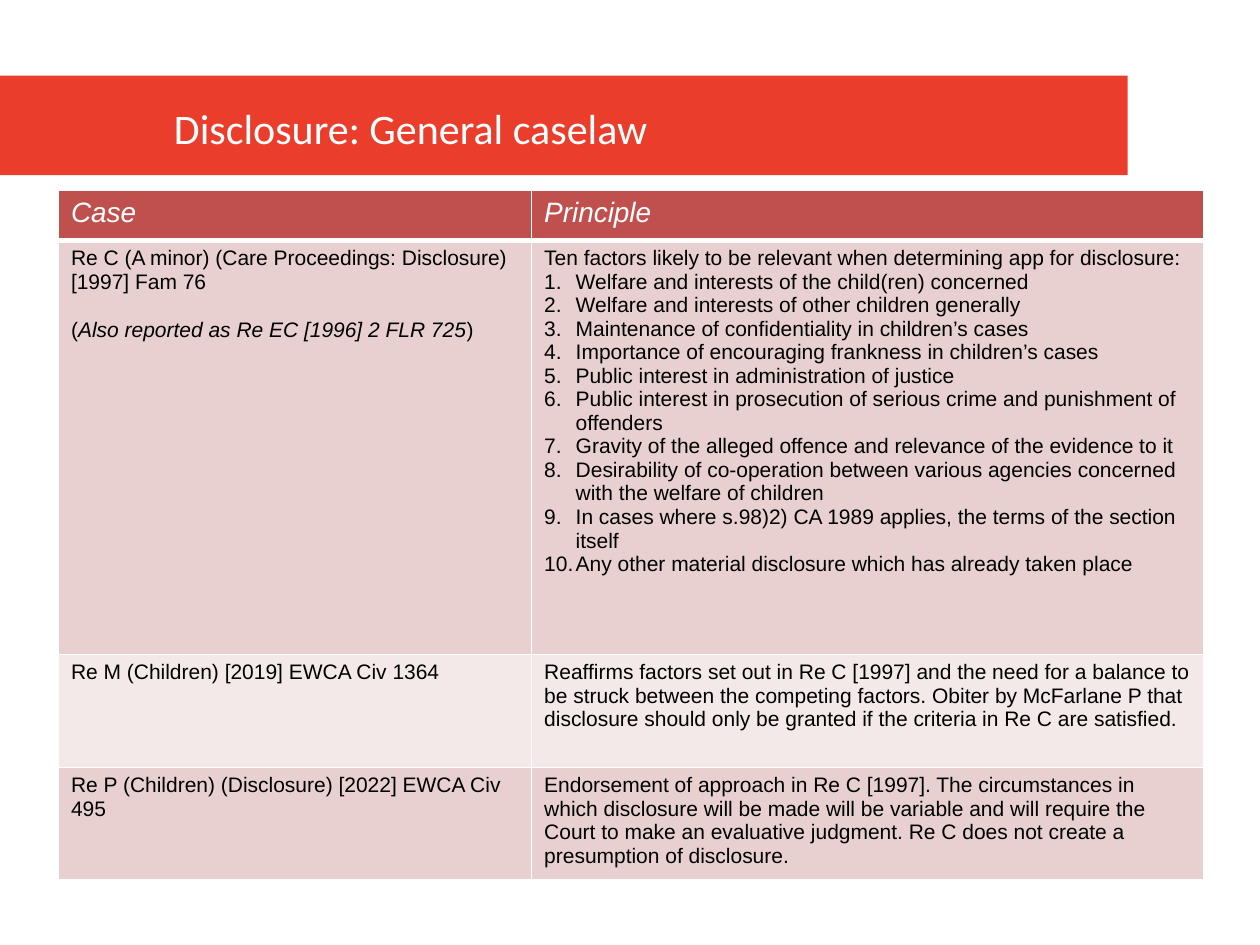
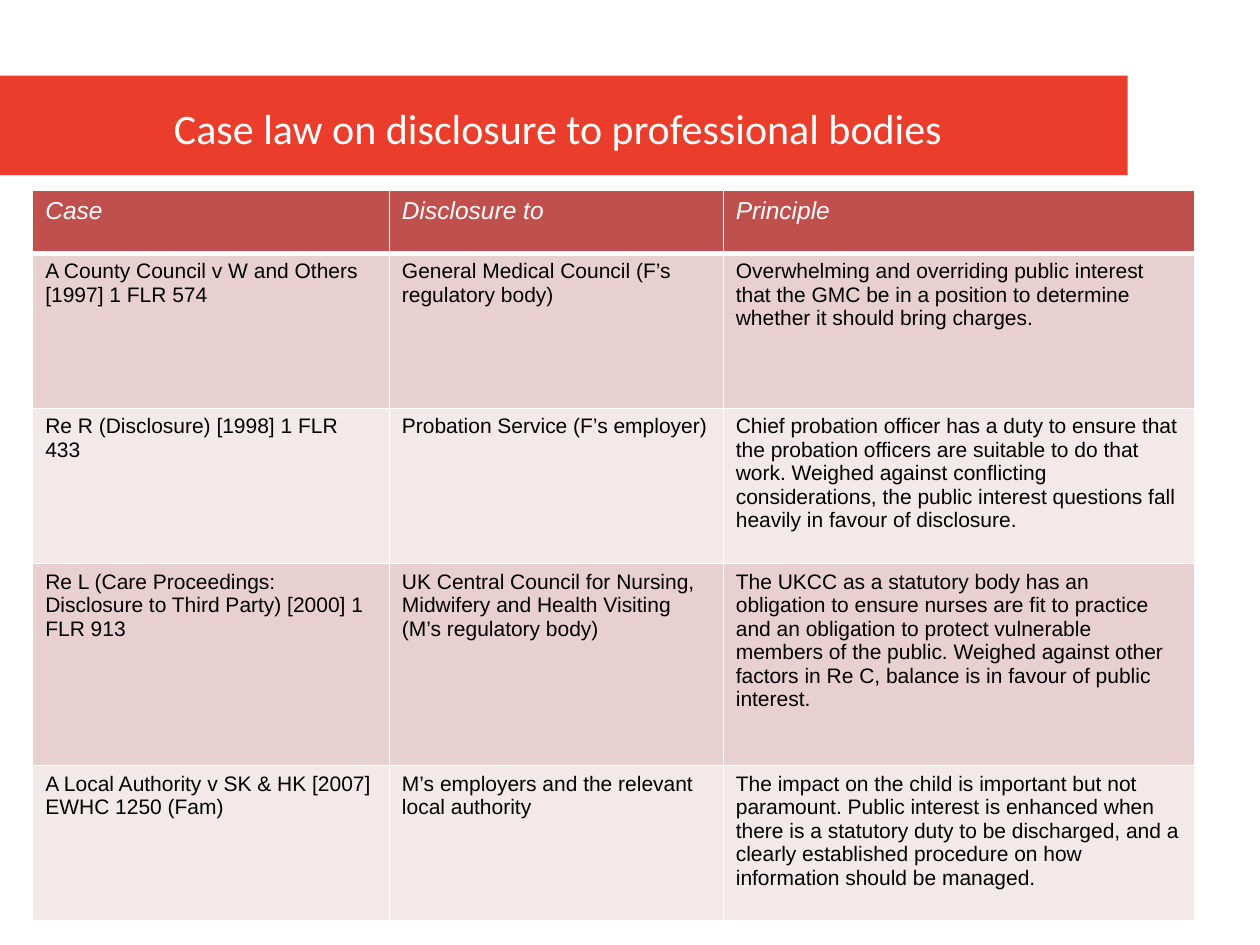
from lxml.etree import SubElement
from pptx import Presentation
from pptx.dml.color import RGBColor
from pptx.enum.shapes import MSO_SHAPE
from pptx.enum.text import MSO_ANCHOR, MSO_AUTO_SIZE, PP_ALIGN
from pptx.oxml.ns import qn
from pptx.util import Pt

RED, HEAD, WHITE, BLACK = "E71C07", "C0504D", "FFFFFF", "000000"
TINTS = ["F4E9E9", "E8D0D0"]
TITLE = {"name": "Calibri", "size": Pt(24), "bold": False}
CELL = {"name": "Arial", "bold": False}

# A paragraph that starts with # is numbered; text between * marks is italic.
FACTORS = [
    "Ten factors likely to be relevant when determining app for disclosure:",
    "#Welfare and interests of the child(ren) concerned",
    "#Welfare and interests of other children generally",
    "#Maintenance of confidentiality in children’s cases",
    "#Importance of encouraging frankness in children’s cases",
    "#Public interest in administration of justice",
    "#Public interest in prosecution of serious crime and punishment of offenders",
    "#Gravity of the alleged offence and relevance of the evidence to it",
    "#Desirability of co-operation between various agencies concerned with the "
    "welfare of children",
    "#In cases where s.98)2) CA 1989 applies, the terms of the section itself",
    "#Any other material disclosure which has already taken place",
]

SLIDES = [
    {
        "title": "Disclosure: General caselaw",
        "left": 33.4, "head": 16,
        "cols": [270.4, 384.2],
        "rows": [28.5, 236.6, 64.5, 64.5],
        "cells": [
            [["*Case*"], ["*Principle*"]],
            [["Re C (A minor) (Care Proceedings: Disclosure) [1997] Fam 76",
              "(*Also reported as Re EC [1996] 2 FLR 725*)"],
             FACTORS],
            [["Re M (Children) [2019] EWCA Civ 1364"],
             ["Reaffirms factors set out in Re C [1997] and the need for a "
              "balance to be struck between the competing factors. Obiter by "
              "McFarlane P that disclosure should only be granted if the "
              "criteria in Re C are satisfied."]],
            [["Re P (Children) (Disclosure) [2022] EWCA Civ 495"],
             ["Endorsement of approach in Re C [1997]. The circumstances in "
              "which disclosure will be made will be variable and will require "
              "the Court to make an evaluative judgment. Re C does not create "
              "a presumption of disclosure."]],
        ],
    },
    {
        "title": "Case law on disclosure to professional bodies",
        "left": 18.7, "head": 14,
        "cols": [203.8, 190.8, 269.2],
        "rows": [35.8, 88.7, 88.7, 115.5, 88.7],
        "cells": [
            [["*Case*"], ["*Disclosure to*"], ["*Principle*"]],
            [["A County Council v W and Others [1997] 1 FLR 574"],
             ["General Medical Council (F’s regulatory body)"],
             ["Overwhelming and overriding public interest that the GMC be in "
              "a position to determine whether it should bring charges."]],
            [["Re R (Disclosure) [1998] 1 FLR 433"],
             ["Probation Service (F’s employer)"],
             ["Chief probation officer has a duty to ensure that the probation "
              "officers are suitable to do that work. Weighed against "
              "conflicting considerations, the public interest questions fall "
              "heavily in favour of disclosure."]],
            [["Re L (Care Proceedings: Disclosure to Third Party) [2000] 1 FLR 913"],
             ["UK Central Council for Nursing, Midwifery and Health Visiting "
              "(M’s regulatory body)"],
             ["The UKCC as a statutory body has an obligation to ensure nurses "
              "are fit to practice and an obligation to protect vulnerable "
              "members of the public. Weighed against other factors in Re C, "
              "balance is in favour of public interest."]],
            [["A Local Authority v SK & HK [2007] EWHC 1250 (Fam)"],
             ["M’s employers and the relevant local authority"],
             ["The impact on the child is important but not paramount. Public "
              "interest is enhanced when there is a statutory duty to be "
              "discharged, and a clearly established procedure on how "
              "information should be managed."]],
        ],
    },
]


def paint(part, color):
    """Colour a font or a fill with a hex string."""
    if hasattr(part, "solid"):
        part.solid()
        part.fore_color.rgb = RGBColor.from_string(color)
    else:
        part.color.rgb = RGBColor.from_string(color)


def edge(cell, widths):
    """Draw white cell borders; widths maps a side to points."""
    props = cell._tc.get_or_add_tcPr()
    for side, width in widths.items():
        line = SubElement(props, qn("a:ln" + side), w=str(Pt(width)))
        SubElement(SubElement(line, qn("a:solidFill")), qn("a:srgbClr"), val=WHITE)


deck = Presentation()
deck.slide_width, deck.slide_height = Pt(720), Pt(540)

for page in SLIDES:
    slide = deck.slides.add_slide(deck.slide_layouts[5])

    band = slide.shapes.add_shape(MSO_SHAPE.RECTANGLE, 0, Pt(43.2), Pt(644.4), Pt(56.9))
    band.shadow.inherit = False
    band.line.fill.background()
    paint(band.fill, RED)
    tone = band.element.find(".//" + qn("a:srgbClr"))
    SubElement(tone, qn("a:alpha"), val="85000")
    slide.shapes.element.insert(2, band.element)  # behind the title

    title = slide.shapes.title
    title.left, title.top, title.width, title.height = Pt(92.2), Pt(55), Pt(544.3), Pt(33)
    frame = title.text_frame
    frame.text = page["title"]
    frame.auto_size = MSO_AUTO_SIZE.NONE
    frame.vertical_anchor = MSO_ANCHOR.TOP
    para = frame.paragraphs[0]
    para.alignment = PP_ALIGN.LEFT
    for key, value in TITLE.items():
        setattr(para.font, key, value)
    paint(para.font, WHITE)

    cols, rows = page["cols"], page["rows"]
    table = slide.shapes.add_table(
        len(rows), len(cols), Pt(page["left"]), Pt(108.9), Pt(sum(cols)), Pt(sum(rows))
    ).table
    for col, width in zip(table.columns, cols):
        col.width = Pt(width)
    for row, height in zip(table.rows, rows):
        row.height = Pt(height)

    for r, line in enumerate(page["cells"]):
        for c, texts in enumerate(line):
            cell = table.cell(r, c)
            edge(cell, {"L": 1, "R": 1, "T": 1, "B": 1 if r else 3})
            paint(cell.fill, TINTS[r % 2] if r else HEAD)
            frame = cell.text_frame
            for n, text in enumerate(texts):
                para = frame.add_paragraph() if n else frame.paragraphs[0]
                if text.startswith("#"):
                    props = para._p.get_or_add_pPr()
                    props.set("marL", str(Pt(18)))
                    props.set("indent", str(-Pt(18)))
                    SubElement(props, qn("a:buFont"), typeface="+mj-lt")
                    SubElement(props, qn("a:buAutoNum"), type="arabicPeriod")
                elif n:
                    para.space_before = Pt(13.8)
                for k, piece in enumerate(text.lstrip("#").split("*")):
                    if not piece:
                        continue
                    run = para.add_run()
                    run.text = piece
                    for key, value in CELL.items():
                        setattr(run.font, key, value)
                    run.font.size = Pt(12 if r else page["head"])
                    run.font.italic = k % 2 == 1
                    paint(run.font, BLACK if r else WHITE)

deck.save("out.pptx")
